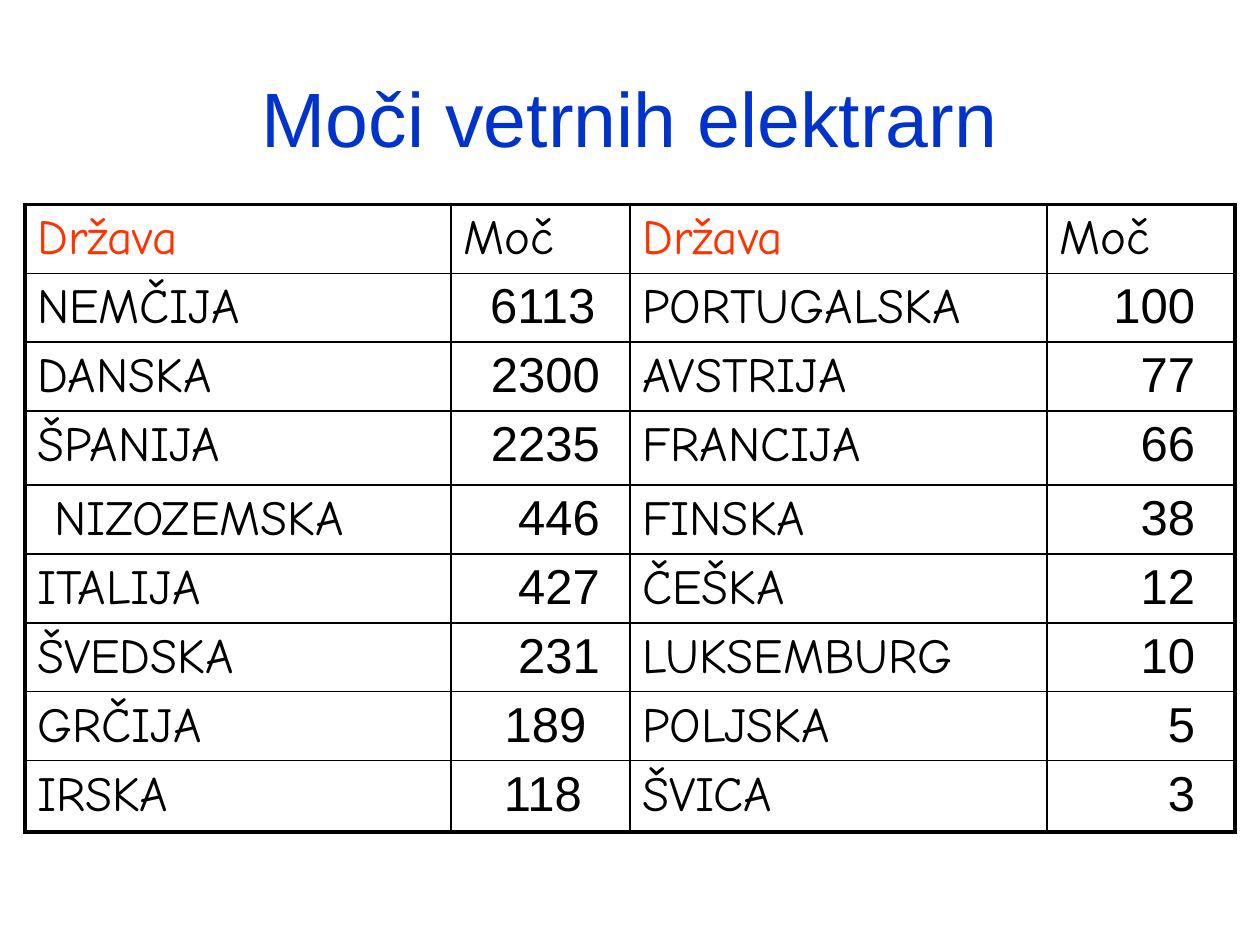
from dataclasses import dataclass

from lxml.etree import SubElement
from pptx import Presentation
from pptx.dml.color import RGBColor
from pptx.enum.text import MSO_ANCHOR, PP_ALIGN
from pptx.oxml.ns import qn
from pptx.util import Cm, Pt


@dataclass(frozen=True)
class Theme:
    title_color: RGBColor = RGBColor(0x00, 0x33, 0xCC)
    country_header: RGBColor = RGBColor(0xFF, 0x33, 0x00)
    text: RGBColor = RGBColor(0x00, 0x00, 0x00)
    title_font: str = "Arial"
    number_font: str = "Arial"
    label_font: str = "Comic Neue"
    title_size: Pt = Pt(44)
    table_size: Pt = Pt(28)
    inner_line: Pt = Pt(1)
    outer_line: Pt = Pt(2.25)


@dataclass(frozen=True)
class Power:
    country: str
    value: int
    left_margin: Cm = Cm(0.25)
    right_margin: Cm = Cm(0.61)


THEME = Theme()
FAR_RIGHT_MARGIN = Cm(0.81)
COLUMN_WIDTHS = [Cm(8.59), Cm(3.61), Cm(8.41), Cm(3.79)]
ROW_HEIGHTS = [Cm(height) for height in [1.39] * 3 + [1.49] + [1.39] * 4 + [1.44]]

LARGER_POWERS = [
    Power("NEMČIJA", 6113, right_margin=Cm(0.7)),
    Power("DANSKA", 2300),
    Power("ŠPANIJA", 2235),
    Power("NIZOZEMSKA", 446, left_margin=Cm(0.59)),
    Power("ITALIJA", 427),
    Power("ŠVEDSKA", 231),
    Power("GRČIJA", 189, right_margin=Cm(0.88)),
    Power("IRSKA", 118, right_margin=Cm(0.97)),
]
SMALLER_POWERS = [
    Power(country, value, right_margin=FAR_RIGHT_MARGIN)
    for country, value in [
        ("PORTUGALSKA", 100), ("AVSTRIJA", 77), ("FRANCIJA", 66), ("FINSKA", 38),
        ("ČEŠKA", 12), ("LUKSEMBURG", 10), ("POLJSKA", 5), ("ŠVICA", 3),
    ]
]


def format_text(paragraph, font_name: str, size: Pt, color: RGBColor) -> None:
    for run in paragraph.runs:
        run.font.name = font_name
        run.font.size = size
        run.font.color.rgb = color


def add_title(slide, text: str) -> None:
    title = slide.shapes.add_textbox(Cm(1.27), Cm(0.76), Cm(22.86), Cm(3.18))
    frame = title.text_frame
    frame.word_wrap = True
    frame.vertical_anchor = MSO_ANCHOR.MIDDLE
    frame.text = text
    paragraph = frame.paragraphs[0]
    paragraph.alignment = PP_ALIGN.CENTER
    format_text(paragraph, THEME.title_font, THEME.title_size, THEME.title_color)


def set_borders(cell, row: int, column: int) -> None:
    """Draw heavy lines on the table's outline and light lines inside it."""
    outer_sides = {
        "a:lnL": column == 0,
        "a:lnR": column == len(COLUMN_WIDTHS) - 1,
        "a:lnT": row == 0,
        "a:lnB": row == len(ROW_HEIGHTS) - 1,
    }
    properties = cell._tc.get_or_add_tcPr()
    for tag, is_outer in outer_sides.items():
        width = THEME.outer_line if is_outer else THEME.inner_line
        line = SubElement(properties, qn(tag), w=str(int(width)))
        fill = SubElement(line, qn("a:solidFill"))
        SubElement(fill, qn("a:srgbClr"), val=str(THEME.text))


def fill_cell(cell, text: str, font_name: str, color: RGBColor = THEME.text) -> None:
    cell.text_frame.text = text
    format_text(cell.text_frame.paragraphs[0], font_name, THEME.table_size, color)


def fill_column_pair(table, first_column: int, powers: list[Power]) -> None:
    """Write countries and their right-aligned powers in two adjacent columns."""
    fill_cell(table.cell(0, first_column), "Država", THEME.label_font, THEME.country_header)
    fill_cell(table.cell(0, first_column + 1), "Moč", THEME.label_font)
    for row, power in enumerate(powers, start=1):
        country_cell = table.cell(row, first_column)
        fill_cell(country_cell, power.country, THEME.label_font)
        country_cell.margin_left = power.left_margin
        value_cell = table.cell(row, first_column + 1)
        fill_cell(value_cell, str(power.value), THEME.number_font)
        value_cell.margin_right = power.right_margin
        value_cell.text_frame.paragraphs[0].alignment = PP_ALIGN.RIGHT


def add_power_table(slide) -> None:
    table = slide.shapes.add_table(
        len(ROW_HEIGHTS), len(COLUMN_WIDTHS), Cm(0.5), Cm(4.12),
        sum(COLUMN_WIDTHS), sum(ROW_HEIGHTS),
    ).table
    table.first_row = False
    table.horz_banding = False
    for column, width in zip(table.columns, COLUMN_WIDTHS):
        column.width = width
    for row, height in zip(table.rows, ROW_HEIGHTS):
        row.height = height
    for row in range(len(ROW_HEIGHTS)):
        for column in range(len(COLUMN_WIDTHS)):
            cell = table.cell(row, column)
            set_borders(cell, row, column)
            cell.fill.background()
            cell.margin_bottom = Cm(0)
    fill_column_pair(table, 0, LARGER_POWERS)
    fill_column_pair(table, 2, SMALLER_POWERS)


def main() -> None:
    presentation = Presentation()
    presentation.slide_width = Cm(25.4)
    presentation.slide_height = Cm(19.05)
    slide = presentation.slides.add_slide(presentation.slide_layouts[6])
    add_title(slide, "Moči vetrnih elektrarn")
    add_power_table(slide)
    presentation.save("out.pptx")


if __name__ == "__main__":
    main()
